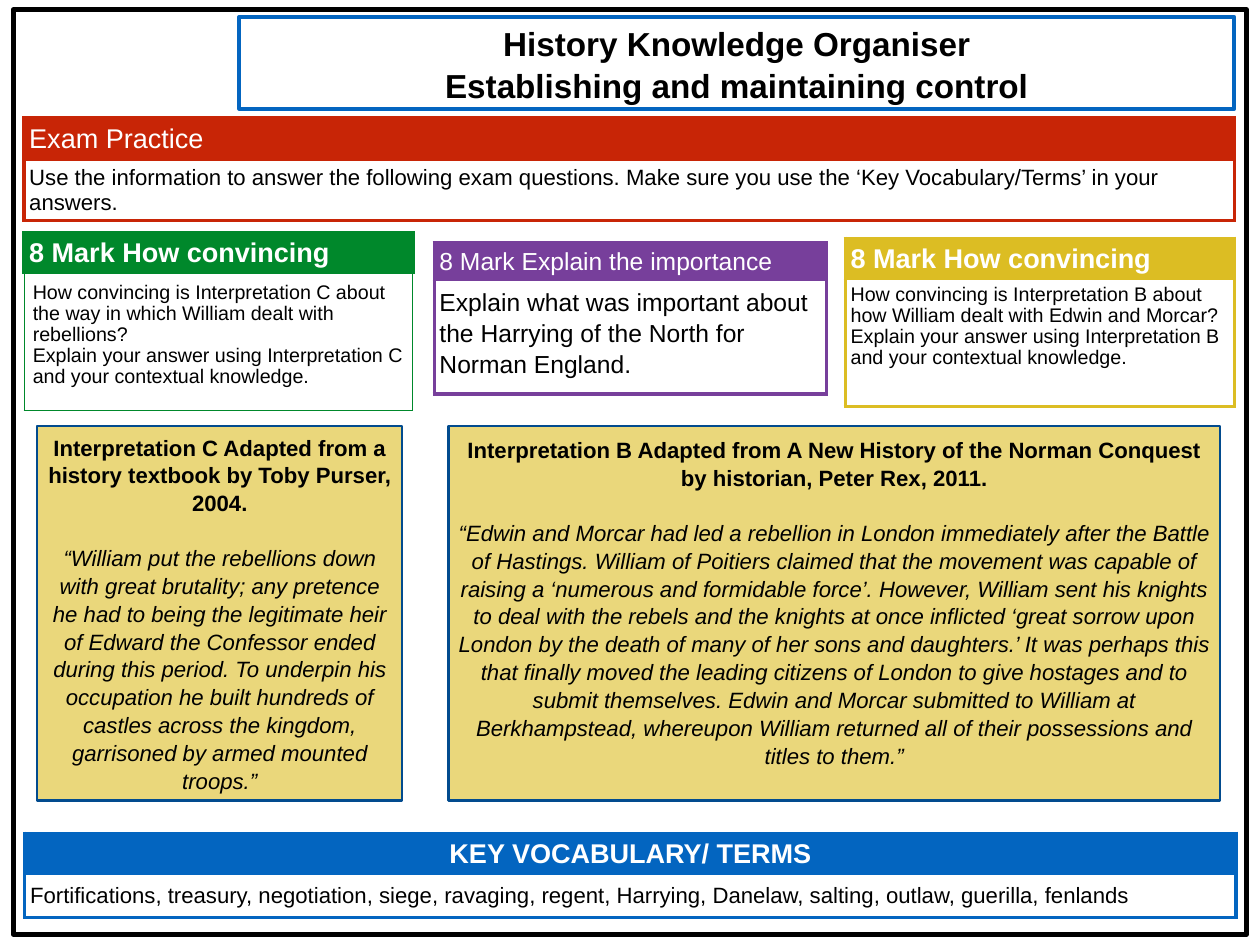
from lxml import etree
from pptx import Presentation
from pptx import util as u
from pptx.dml import color
from pptx.enum import shapes, text
from pptx.oxml import ns

BLACK, WHITE, BLUE = "000000", "FFFFFF", "0365C0"


def rgb(value):
    return color.RGBColor.from_string(value)


class Organiser:
    """Holds the style and the current slide."""

    font = "Arial"
    sand, navy = "EAD77B", "024B8E"

    def __init__(self, prs):
        self.s = prs.slides.add_slide(prs.slide_layouts[5])

    def set_text(self, tf, lines, size, ink=BLACK, bold=False, align=None, spacing=1.0):
        tf.word_wrap = True
        tf.text = "\n".join(lines)
        for p in tf.paragraphs:
            p.alignment = align or text.PP_ALIGN.LEFT
            p.line_spacing = spacing
            p.space_before = p.space_after = u.Pt(0)
            for r in p.runs:
                f = r.font
                f.name, f.size, f.bold = self.font, u.Pt(size), bold
                f.color.rgb = rgb(ink)

    def outline(self, sp, line, width, fill=None):
        sp.line.color.rgb = rgb(line)
        sp.line.width = u.Pt(width)
        if fill:
            sp.fill.solid()
            sp.fill.fore_color.rgb = rgb(fill)
        else:
            sp.fill.background()

    def box(self, x, y, w, h, line, width, fill=None):
        sp = self.s.shapes.add_shape(
            shapes.MSO_SHAPE.RECTANGLE, *map(u.Inches, (x, y, w, h)))
        sp.shadow.inherit = False
        self.outline(sp, line, width, fill)
        return sp

    def title(self, x, y, w, h, lines):
        sp = self.s.shapes.title
        sp.left, sp.top, sp.width, sp.height = map(u.Inches, (x, y, w, h))
        self.outline(sp, BLUE, 3)
        tf = sp.text_frame
        tf.auto_size = text.MSO_AUTO_SIZE.NONE
        tf.vertical_anchor = text.MSO_ANCHOR.MIDDLE
        tf.margin_left = tf.margin_right = u.Inches(0.06)
        tf.margin_top = tf.margin_bottom = u.Inches(0.06)
        self.set_text(tf, lines, 27, bold=True, align=text.PP_ALIGN.CENTER, spacing=1.05)

    def interpretation(self, x, w, heading, quote, bottom=0.05):
        tf = self.box(x, 4.81, w, 4.23, self.navy, 2, self.sand).text_frame
        tf.vertical_anchor = text.MSO_ANCHOR.MIDDLE
        tf.margin_bottom = u.Inches(bottom)
        self.set_text(tf, [heading, quote], 18, align=text.PP_ALIGN.CENTER, spacing=1.05)
        first, second = tf.paragraphs
        first.space_after = u.Pt(21.6)
        first.runs[0].font.bold = True
        second.runs[0].font.italic = True

    def borders(self, cell, hue, widths):
        tc_pr = cell._tc.get_or_add_tcPr()
        for side, width in zip("LRTB", widths):
            ln = etree.SubElement(tc_pr, ns.qn("a:ln" + side), w=str(u.Pt(width)))
            fill = etree.SubElement(ln, ns.qn("a:solidFill"))
            etree.SubElement(fill, ns.qn("a:srgbClr"), val=hue)

    def panel(self, x, y, w, rows, hue, heading, lines, head_size=22, size=18,
              bold=True, align=None, spacing=1.0, inset=0.06, edge=3):
        table = self.s.shapes.add_table(
            2, 1, *map(u.Inches, (x, y, w, sum(rows)))).table
        table.horz_banding = False
        table.columns[0].width = u.Inches(w)
        head, body = table.cell(0, 0), table.cell(1, 0)
        for row, height in zip(table.rows, rows):
            row.height = u.Inches(height)
        self.borders(head, hue, (3, 3, 3, 0.75))
        self.borders(body, hue, (edge, edge, 0.75, edge))
        for cell, fill, gap in ((head, hue, 0.06), (body, WHITE, inset)):
            cell.fill.solid()
            cell.fill.fore_color.rgb = rgb(fill)
            cell.margin_left = cell.margin_right = u.Inches(gap)
            cell.margin_top = cell.margin_bottom = u.Inches(gap)
        head.vertical_anchor = text.MSO_ANCHOR.MIDDLE
        self.set_text(head.text_frame, [heading], head_size, WHITE, bold, align)
        self.set_text(body.text_frame, lines, size, spacing=spacing)


def main():
    prs = Presentation()
    prs.slide_width, prs.slide_height = u.Inches(14.22), u.Inches(10.67)
    page = Organiser(prs)

    # Page frame and title
    page.box(0.15, 0.11, 13.92, 10.44, BLACK, 4)
    page.title(2.7, 0.19, 11.23, 1.04,
               ["History Knowledge Organiser", "Establishing and maintaining control"])

    # Vocabulary and instructions
    page.panel(0.28, 9.41, 13.67, (0.45, 0.49), BLUE, "KEY VOCABULARY/ TERMS",
               ["Fortifications, treasury, negotiation, siege, ravaging, regent, "
                "Harrying, Danelaw, salting, outlaw, guerilla, fenlands"],
               align=text.PP_ALIGN.CENTER, spacing=1.15)
    page.panel(0.27, 1.33, 13.66, (0.48, 0.67), "C82506", "Exam Practice",
               ["Use the information to answer the following exam questions. Make sure "
                "you use the ‘Key Vocabulary/Terms’ in your answers."], bold=False)

    # Exam questions
    convincing = "8 Mark How convincing"
    page.panel(0.27, 2.63, 4.39, (0.45, 1.54), "00882B", convincing,
               ["How convincing is Interpretation C about the way in which William "
                "dealt with rebellions?",
                "Explain your answer using Interpretation C and your contextual "
                "knowledge."], size=16, spacing=0.96, inset=0.1, edge=0.75)
    page.panel(4.9, 2.74, 4.43, (0.43, 1.28), "773F9B", "8 Mark Explain the importance",
               ["Explain what was important about the Harrying of the North for "
                "Norman England."], head_size=20, size=20, bold=False, spacing=1.12)
    page.panel(9.54, 2.69, 4.39, (0.45, 1.44), "DCBD23", convincing,
               ["How convincing is Interpretation B about how William dealt with "
                "Edwin and Morcar?",
                "Explain your answer using Interpretation B and your contextual "
                "knowledge."], size=16, spacing=0.96)

    # Interpretations
    page.interpretation(
        0.42, 4.12,
        "Interpretation C Adapted from a history textbook by Toby Purser, 2004.",
        "“William put the rebellions down with great brutality; any pretence he had to "
        "being the legitimate heir of Edward the Confessor ended during this period. "
        "To underpin his occupation he built hundreds of castles across the kingdom, "
        "garrisoned by armed mounted troops.”")
    page.interpretation(
        5.06, 8.71,
        "Interpretation B Adapted from A New History of the Norman Conquest by "
        "historian, Peter Rex, 2011.",
        "“Edwin and Morcar had led a rebellion in London immediately after the Battle "
        "of Hastings. William of Poitiers claimed that the movement was capable of "
        "raising a ‘numerous and formidable force’. However, William sent his knights "
        "to deal with the rebels and the knights at once inflicted ‘great sorrow upon "
        "London by the death of many of her sons and daughters.’ It was perhaps this "
        "that finally moved the leading citizens of London to give hostages and to "
        "submit themselves. Edwin and Morcar submitted to William at Berkhampstead, "
        "whereupon William returned all of their possessions and titles to them.”",
        bottom=0.3)

    prs.save("out.pptx")


if __name__ == "__main__":
    main()
